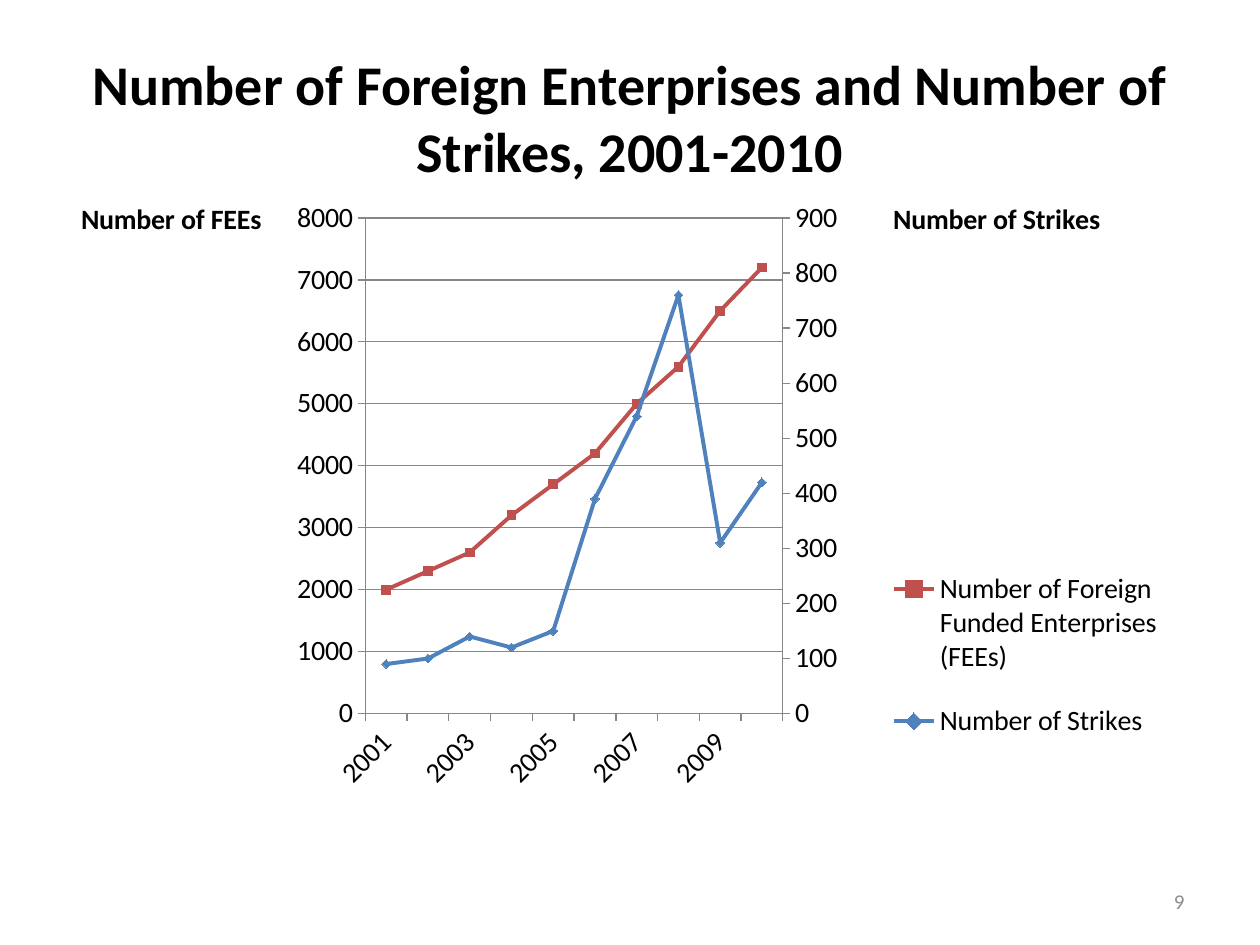
from copy import deepcopy
from dataclasses import dataclass

from lxml import etree
from pptx import Presentation
from pptx import util as u
from pptx.chart.axis import ValueAxis
from pptx.chart.data import CategoryChartData
from pptx.dml.color import RGBColor
from pptx.enum import chart as charts, text
from pptx.oxml.ns import qn


@dataclass(frozen=True)
class Theme:
    font: str = "Calibri"
    ink: str = "000000"
    muted: str = "8C8C8C"
    grid: str = "878787"
    enterprises: str = "C0504D"
    strikes: str = "4F81BD"
    title_size: int = 32
    chart_size: int = 16
    number_size: int = 12


YEARS = [str(year) for year in range(2001, 2011)]
ENTERPRISES = [2000, 2300, 2600, 3200, 3700, 4200, 5000, 5600, 6500, 7200]
STRIKES = [90, 100, 140, 120, 150, 390, 540, 760, 310, 420]


def add_element(parent, tag, value=None, index=None):
    element = etree.Element(qn(tag))
    if value is not None:
        element.set("val", str(value))
    parent.insert(len(parent) if index is None else index, element)
    return element


def place(parent, index, **fractions):
    """Give a chart part a fixed place, in fractions of the chart."""
    for old in parent.findall(qn("c:layout")):
        parent.remove(old)
    layout = add_element(parent, "c:layout", index=index)
    manual = add_element(layout, "c:manualLayout")
    if parent.tag == qn("c:plotArea"):
        add_element(manual, "c:layoutTarget", "inner")
    for name in ("x", "y"):
        add_element(manual, f"c:{name}Mode", "edge")
    for name, fraction in fractions.items():
        add_element(manual, f"c:{name}", fraction)


class SlideBuilder:
    def __init__(self, deck, theme):
        self.theme = theme
        self.page = deck.slides.add_slide(deck.slide_layouts[6])

    def style_font(self, font, size, color, bold=False):
        font.name, font.size, font.bold = self.theme.font, u.Pt(size), bold
        font.color.rgb = RGBColor.from_string(color)

    def add_text(self, words, frame, size, color, align, bold=False):
        box = self.page.shapes.add_textbox(*map(u.Cm, frame))
        box.text_frame.word_wrap = True
        box.text_frame.vertical_anchor = text.MSO_ANCHOR.MIDDLE
        para = box.text_frame.paragraphs[0]
        para.alignment = align
        span = para.add_run()
        span.text = words
        self.style_font(span.font, size, color, bold)

    def style_line(self, line):
        line.color.rgb = RGBColor.from_string(self.theme.grid)
        line.width = u.Pt(0.75)

    def style_value_axis(self, element, title, maximum, step, x):
        axis = ValueAxis(element)
        axis.minimum_scale, axis.maximum_scale, axis.major_unit = 0, maximum, step
        axis.major_tick_mark = charts.XL_TICK_MARK.OUTSIDE
        self.style_line(axis.format.line)
        para = axis.axis_title.text_frame.paragraphs[0]
        span = para.add_run()
        span.text = title
        self.style_font(span.font, self.theme.chart_size, self.theme.ink, True)
        heading = element.find(qn("c:title"))
        body = heading.find(".//" + qn("a:bodyPr"))
        body.set("rot", "0")
        body.set("vert", "horz")
        place(heading, 1, x=x, y=0.01)

    def style_series(self, series, color, marker):
        series.smooth = False
        rgb = RGBColor.from_string(color)
        series.format.line.color.rgb = rgb
        series.format.line.width = u.Pt(2.25)
        series.marker.style = marker
        series.marker.size = 5
        series.marker.format.fill.solid()
        series.marker.format.fill.fore_color.rgb = rgb
        series.marker.format.line.color.rgb = rgb

    def add_right_axis(self, plot_area):
        """Move the last series to a second plot and return its value axis."""
        left_plot = plot_area.find(qn("c:lineChart"))
        right_plot = deepcopy(left_plot)
        left_plot.remove(left_plot.findall(qn("c:ser"))[1])
        right_plot.remove(right_plot.find(qn("c:ser")))
        left_plot.addnext(right_plot)

        right_cat = deepcopy(plot_area.find(qn("c:catAx")))
        right_val = deepcopy(plot_area.find(qn("c:valAx")))
        cat_id, val_id = "50010", "50020"
        for ref, new_id in zip(right_plot.findall(qn("c:axId")), (cat_id, val_id)):
            ref.set("val", new_id)
        for axis, own, other in ((right_cat, cat_id, val_id), (right_val, val_id, cat_id)):
            axis.find(qn("c:axId")).set("val", own)
            axis.find(qn("c:crossAx")).set("val", other)
        right_cat.find(qn("c:delete")).set("val", "1")
        right_val.find(qn("c:axPos")).set("val", "r")
        right_val.find(qn("c:crosses")).set("val", "max")
        ValueAxis(right_val).has_major_gridlines = False
        plot_area.find(qn("c:valAx")).addnext(right_val)
        right_val.addnext(right_cat)
        return right_val

    def add_two_axis_chart(self, frame):
        theme = self.theme
        data = CategoryChartData()
        data.categories = YEARS
        data.add_series("Number of Foreign Funded Enterprises (FEEs)", ENTERPRISES)
        data.add_series("Number of Strikes", STRIKES)
        chart = self.page.shapes.add_chart(
            charts.XL_CHART_TYPE.LINE_MARKERS, *map(u.Cm, frame), data).chart
        self.style_font(chart.font, theme.chart_size, theme.ink)
        chart.has_title = False
        chart.plots[0].vary_by_categories = False
        markers = charts.XL_MARKER_STYLE
        enterprises, strikes = chart.plots[0].series
        self.style_series(enterprises, theme.enterprises, markers.SQUARE)
        self.style_series(strikes, theme.strikes, markers.DIAMOND)

        years = chart.category_axis
        years.major_tick_mark = charts.XL_TICK_MARK.OUTSIDE
        self.style_line(years.format.line)
        self.style_font(years.tick_labels.font, theme.chart_size, theme.ink)
        chart.value_axis.has_major_gridlines = True
        self.style_line(chart.value_axis.major_gridlines.format.line)

        plot_area = chart.element.find(".//" + qn("c:plotArea"))
        left_val = plot_area.find(qn("c:valAx"))
        right_val = self.add_right_axis(plot_area)
        self.style_value_axis(left_val, "Number of FEEs", 8000, 1000, 0.02)
        self.style_value_axis(right_val, "Number of Strikes", 900, 100, 0.73)
        label_body = plot_area.find(qn("c:catAx")).find(
            f"{qn('c:txPr')}/{qn('a:bodyPr')}")
        label_body.set("rot", str(-45 * 60000))
        place(plot_area, 0, x=0.273, y=0.046, w=0.365, h=0.787)

        chart.has_legend = True
        chart.legend.position = charts.XL_LEGEND_POSITION.RIGHT
        chart.legend.include_in_layout = False
        place(chart.element.find(".//" + qn("c:legend")), 1,
              x=0.72, y=0.56, w=0.26, h=0.36)


def main():
    theme = Theme()
    deck = Presentation()
    deck.slide_width, deck.slide_height = u.Cm(25.4), u.Cm(19.05)
    slide = SlideBuilder(deck, theme)
    slide.add_text("Number of Foreign Enterprises and Number of Strikes, 2001-2010",
                   (1.27, 0.76, 22.86, 3.18), theme.title_size, theme.ink,
                   text.PP_ALIGN.CENTER, bold=True)
    slide.add_two_axis_chart((1.07, 3.81, 23.06, 12.7))
    slide.add_text("9", (18.2, 17.65, 5.93, 1.02), theme.number_size, theme.muted,
                   text.PP_ALIGN.RIGHT)
    deck.save("out.pptx")


if __name__ == "__main__":
    main()
